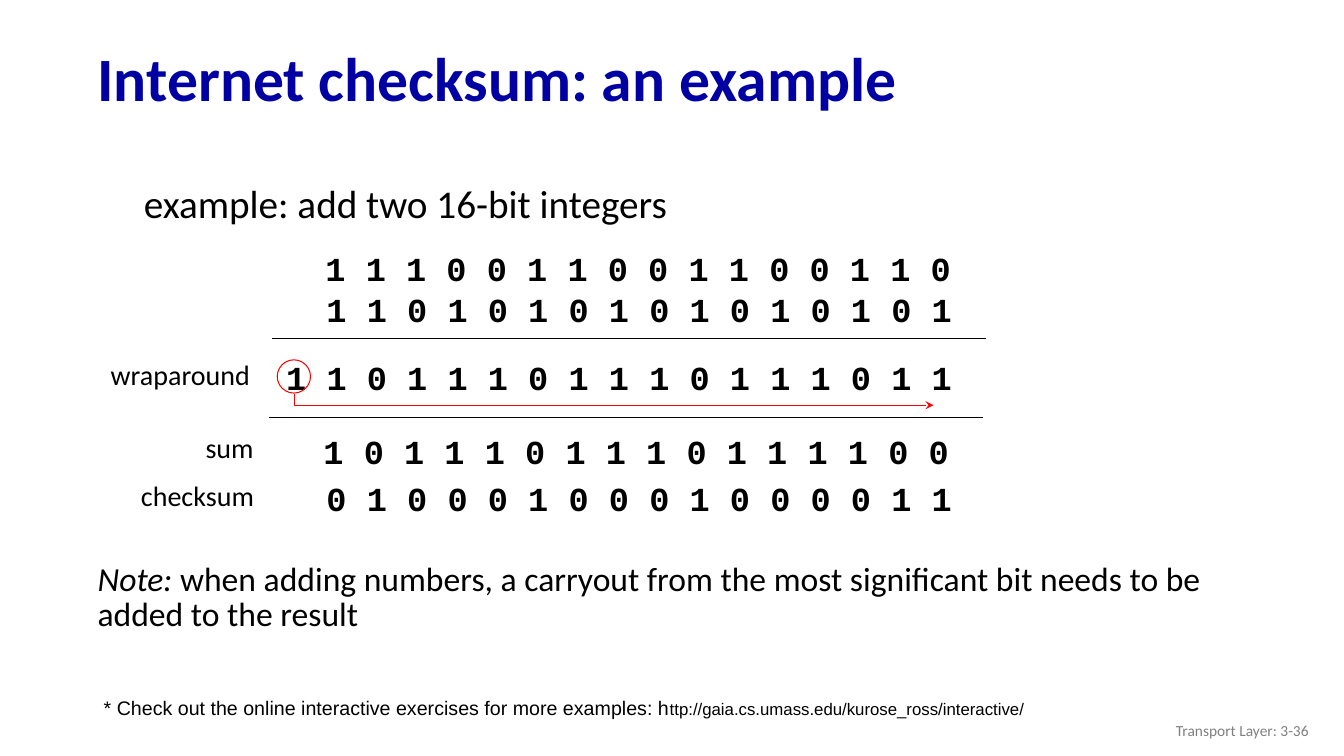
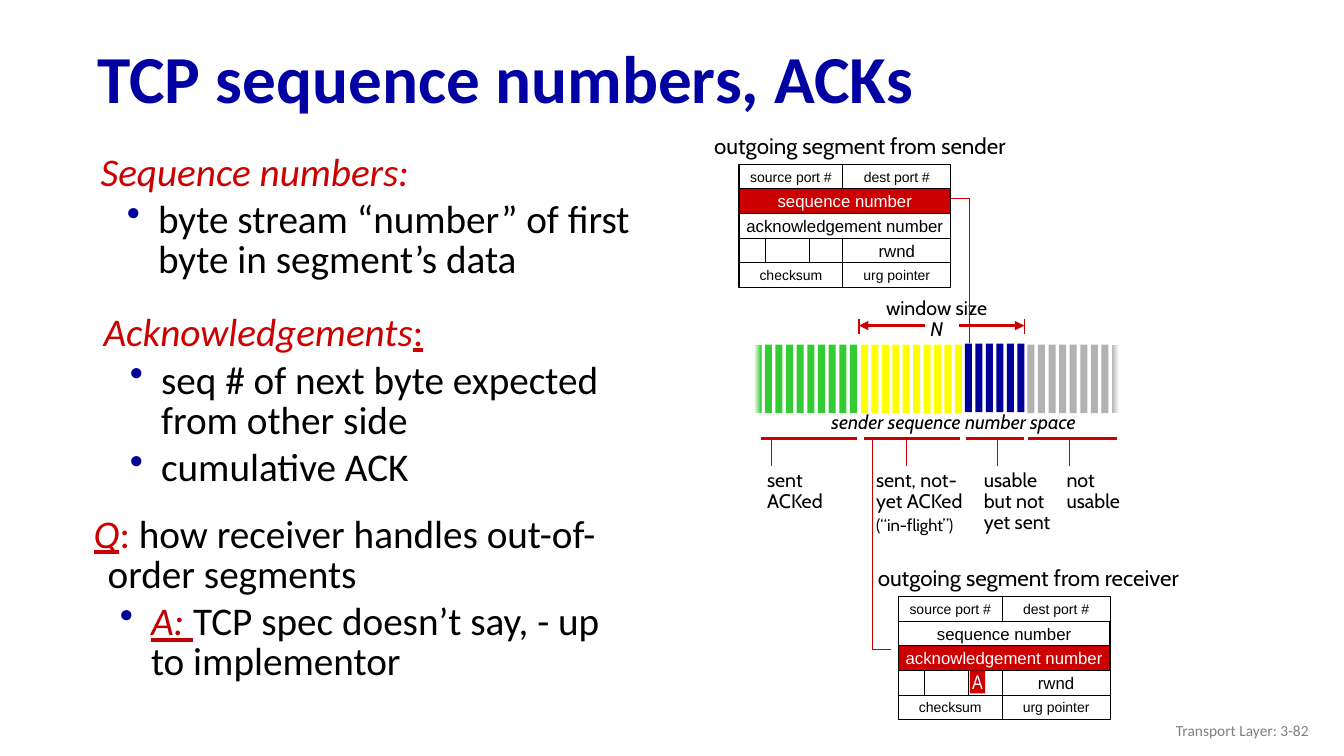
from dataclasses import dataclass, field

from lxml import etree
from pptx import Presentation
from pptx.dml.color import RGBColor
from pptx.enum.shapes import MSO_CONNECTOR, MSO_SHAPE
from pptx.enum.text import MSO_ANCHOR, PP_ALIGN
from pptx.oxml.ns import qn
from pptx.util import Inches, Pt

STRAIGHT = MSO_CONNECTOR.STRAIGHT
RECTANGLE, OVAL = MSO_SHAPE.RECTANGLE, MSO_SHAPE.OVAL
LEFT, CENTER, RIGHT = PP_ALIGN.LEFT, PP_ALIGN.CENTER, PP_ALIGN.RIGHT
TOP, MIDDLE = MSO_ANCHOR.TOP, MSO_ANCHOR.MIDDLE

BLACK, WHITE, GREY = "000000", "FFFFFF", "808080"
TITLE_BLUE, BULLET_BLUE = "0000A3", "000099"
RED, DARK_RED, BRIGHT_RED = "CC0000", "C00000", "FF0000"
GREEN, YELLOW, SILVER = "33CC33", "FFFF00", "B2B2B2"

TITLE = {"name": "Calibri", "bold": True, "color": TITLE_BLUE}
FOOTER = {"name": "Calibri", "size": 11, "color": GREY}
BODY = {"name": "Calibri", "size": 28}
HEADING = {**BODY, "color": RED, "italic": True}
ROW_LABEL = {"name": "Calibri", "size": 20}
NOTE = {"name": "Calibri", "size": 24}
BITS = {"name": "Courier New", "size": 24, "bold": True}
SOURCE = {"name": "Arial", "size": 14}
CAPTION = {"name": "Cabin", "size": 16}
LABEL = {"name": "Cabin", "size": 14}


@dataclass
class Span:
    text: str
    style: dict


@dataclass
class Para:
    spans: list[Span]
    align: PP_ALIGN = LEFT
    spacing: float = 1.0
    before: float = 0
    margin: float = 0
    indent: float = 0
    bullet: bool = False


@dataclass
class Cell:
    row: int
    left: float
    width: float
    text: str = ""
    size: int = 10


@dataclass
class BarRun:
    color: str
    first: float
    last: float
    count: int
    top: float = 3.42


@dataclass
class Region:
    left: float
    right: float
    tick: float
    text_left: float
    text_width: float
    paras: list[Para] = field(default_factory=list)


def rgb(color: str) -> RGBColor:
    return RGBColor.from_string(color)


def plain(text: str, style: dict, **layout) -> Para:
    return Para([Span(text, style)], **layout)


# Text
def fill_frame(frame, paras: list[Para], anchor=TOP) -> None:
    frame.word_wrap = True
    frame.vertical_anchor = anchor
    for index, para in enumerate(paras):
        target = frame.add_paragraph() if index else frame.paragraphs[0]
        if para.margin:
            properties = target._p.get_or_add_pPr()
            properties.set("marL", str(Inches(para.margin)))
            properties.set("indent", str(Inches(para.indent)))
            if para.bullet:
                bullet_color = etree.SubElement(properties, qn("a:buClr"))
                etree.SubElement(bullet_color, qn("a:srgbClr"), val=BULLET_BLUE)
                etree.SubElement(properties, qn("a:buChar"), char="•")
        target.alignment = para.align
        target.line_spacing = para.spacing
        target.space_before = Pt(para.before)
        for span in para.spans:
            run = target.add_run()
            run.text = span.text
            style = {"color": BLACK, **span.style}
            run.font.color.rgb = rgb(style.pop("color"))
            for name, value in style.items():
                setattr(run.font, name, Pt(value) if name == "size" else value)


def add_text(page, left: float, top: float, width: float, height: float,
             paras: list[Para], anchor=TOP) -> None:
    box = page.shapes.add_textbox(Inches(left), Inches(top), Inches(width), Inches(height))
    fill_frame(box.text_frame, paras, anchor)


# Shapes and lines
def add_shape(page, kind, left: float, top: float, width: float, height: float,
              fill: str | tuple[str, str] | None = None,
              line: str | None = None):
    shape = page.shapes.add_shape(
        kind, Inches(left), Inches(top), Inches(width), Inches(height))
    shape.shadow.inherit = False
    if isinstance(fill, tuple):
        shape.fill.gradient()
        shape.fill.gradient_angle = 0
        for stop, color, position in zip(shape.fill.gradient_stops, fill, (0, 1)):
            stop.color.rgb = rgb(color)
            stop.position = position
    elif fill:
        shape.fill.solid()
        shape.fill.fore_color.rgb = rgb(fill)
    else:
        shape.fill.background()
    if line:
        style_line(shape.line, line, 0.75)
    else:
        shape.line.fill.background()
    return shape


def style_line(line, color: str, weight: float, arrow: str = "") -> None:
    line.color.rgb = rgb(color)
    line.width = Pt(weight)
    if arrow:
        etree.SubElement(line._get_or_add_ln(), qn("a:tailEnd"), type=arrow)


def add_line(page, x1: float, y1: float, x2: float, y2: float,
             color: str, weight: float = 0.75, arrow: str = "") -> None:
    line = page.shapes.add_connector(
        STRAIGHT, Inches(x1), Inches(y1), Inches(x2), Inches(y2))
    style_line(line.line, color, weight, arrow)
    etree.SubElement(line._element.spPr, qn("a:effectLst"))


def add_elbow(page, points: list[tuple[float, float]], color: str, arrow: str = "") -> None:
    corners = [(Inches(x), Inches(y)) for x, y in points]
    builder = page.shapes.build_freeform(*corners[0])
    builder.add_line_segments(corners[1:], close=False)
    elbow = builder.convert_to_shape()
    elbow.shadow.inherit = False
    elbow.fill.background()
    style_line(elbow.line, color, 0.75, arrow)


def new_page(deck, title: str, size: int, number: int):
    page = deck.slides.add_slide(deck.slide_layouts[6])
    add_text(page, 0.87, 0.32, 12.14, 0.98,
             [plain(title, {**TITLE, "size": size}, spacing=0.9)], MIDDLE)
    add_text(page, 10.08, 7.05, 3, 0.4,
             [plain(f"Transport Layer: 3-{number}", FOOTER, align=RIGHT)], MIDDLE)
    return page


# Checksum slide
BIT_ROWS = [
    (3.13, 2.41, "1 1 1 0 0 1 1 0 0 1 1 0 0 1 1 0"),
    (3.14, 2.82, "1 1 0 1 0 1 0 1 0 1 0 1 0 1 0 1"),
    (2.74, 3.49, "1 1 0 1 1 1 0 1 1 1 0 1 1 1 0 1 1"),
    (3.11, 4.23, "1 0 1 1 1 0 1 1 1 0 1 1 1 1 0 0"),
    (3.14, 4.69, "0 1 0 0 0 1 0 0 0 1 0 0 0 0 1 1"),
]
ROW_LABELS = [(1, 3.5, "wraparound"), (1.94, 4.22, "sum"), (1.3, 4.7, "checksum")]


def build_checksum(deck) -> None:
    page = new_page(deck, "Internet checksum: an example", 44, 36)
    add_text(page, 1.33, 1.59, 8.5, 0.8,
             [plain("example: add two 16-bit integers", BODY, spacing=1.3)])
    for left, top, bits in BIT_ROWS:
        add_text(page, left, top, 7.2, 0.5, [plain(bits, BITS)])
    for left, top, label in ROW_LABELS:
        add_text(page, left, top, 1.8, 0.44, [plain(label, ROW_LABEL)])
    for left, top in ((2.7, 3.36), (2.67, 4.14)):
        add_line(page, left, top, left + 7.08, top, BLACK, 1)

    # Carry bit and its way round
    add_shape(page, OVAL, 2.75, 3.57, 0.33, 0.33, line=BRIGHT_RED)
    add_elbow(page, [(2.92, 3.91), (2.92, 4.02), (9.26, 4.02)], BRIGHT_RED, "stealth")

    add_text(page, 0.87, 5.55, 11.34, 1.18, [Para([
        Span("Note:", {**NOTE, "italic": True}),
        Span(" when adding numbers, a carryout from the most significant bit "
             "needs to be added to the result", NOTE)], spacing=0.85)])
    add_text(page, 0.93, 6.85, 10.78, 0.34, [Para([
        Span("* Check out the online interactive exercises for more examples: h", SOURCE),
        Span("ttp://gaia.cs.umass.edu/kurose_ross/interactive/", {**SOURCE, "size": 12})])])


# Sequence number slide
SEGMENT_WIDTH, ROW_HEIGHT = 2.1, 1.22 / 5
HALF = 1.03
SEQUENCE_ROW, ACK_ROW = 1, 2
SEGMENT_CELLS = [
    Cell(0, 0, HALF, "source port #"),
    Cell(0, HALF, SEGMENT_WIDTH - HALF, "dest port #"),
    Cell(SEQUENCE_ROW, 0, SEGMENT_WIDTH, "sequence number", 12),
    Cell(ACK_ROW, 0, SEGMENT_WIDTH, "acknowledgement number", 12),
    Cell(3, 0, 0.26),
    Cell(3, 0.26, 0.44),
    Cell(3, 0.7, 0.33),
    Cell(3, HALF, 0.99, "rwnd", 12),
    Cell(4, 0, HALF, "checksum"),
    Cell(4, HALF, SEGMENT_WIDTH - HALF, "urg pointer"),
]
BAR_RUNS = [
    BarRun(GREEN, 7.48, 8.43, 10),
    BarRun(YELLOW, 8.54, 9.47, 10),
    BarRun(BULLET_BLUE, 9.57, 10.09, 6, 3.41),
    BarRun(SILVER, 10.19, 11.03, 9),
]


def label_lines(*lines: str) -> list[Para]:
    return [plain(line, LABEL, spacing=0.9) for line in lines]


REGIONS = [
    Region(7.55, 8.5, 7.65, 7.51, 1, label_lines("sent", "ACKed")),
    Region(8.57, 9.52, 8.99, 8.59, 1.25, label_lines("sent, not-yet ACKed") + [
        plain("(“in-flight”)", {**LABEL, "size": 12}, spacing=0.9, before=3)]),
    Region(9.58, 10.16, 9.89, 9.66, 1.17, label_lines("usable", "but not", "yet sent")),
    Region(10.2, 11.08, 10.61, 10.48, 0.9, label_lines("not", "usable")),
]


def add_cell_text(shape, text: str, style: dict) -> None:
    frame = shape.text_frame
    for side in ("left", "right", "top", "bottom"):
        setattr(frame, f"margin_{side}", 0)
    fill_frame(frame, [plain(text, style, align=CENTER)], MIDDLE)


def add_segment(page, left: float, top: float, active: int,
                caption: str, caption_center: float) -> None:
    add_text(page, caption_center - 1.8, top - 0.37, 3.6, 0.37,
             [plain(caption, CAPTION, align=CENTER)])
    for cell in SEGMENT_CELLS:
        lit = cell.row == active
        width = SEGMENT_WIDTH - HALF if cell.text == "rwnd" else cell.width
        box = add_shape(page, RECTANGLE, left + cell.left, top + cell.row * ROW_HEIGHT,
                        width, ROW_HEIGHT, RED if lit else None, BLACK)
        if cell.text:
            add_cell_text(box, cell.text, {"name": "Arial", "size": cell.size,
                                           "color": WHITE if lit else BLACK})


def heading(*spans: Span) -> Para:
    return Para(list(spans), spacing=0.85, margin=0.26, indent=-0.14)


def bullet(*spans: Span) -> Para:
    return Para(list(spans), spacing=0.85, before=5.5, margin=0.69, indent=-0.31, bullet=True)


def build_sequence(deck) -> None:
    page = new_page(deck, "TCP sequence numbers, ACKs", 48, 82)
    add_text(page, 0.78, 1.48, 5.57, 1.43, [
        heading(Span("Sequence numbers:", HEADING)),
        bullet(Span("byte stream “number” of first byte in segment’s data", BODY))])
    add_text(page, 0.81, 3.07, 5.57, 1.93, [
        heading(Span("Acknowledgements", HEADING),
                Span(":", {**BODY, "color": RED, "underline": True})),
        bullet(Span("seq # of next byte expected from other side", BODY)),
        bullet(Span("cumulative ACK", BODY))])
    add_text(page, 0.71, 5.07, 5.57, 1.89, [
        heading(Span("Q", {**HEADING, "underline": True}),
                Span(":", {**BODY, "color": RED}),
                Span(" how receiver handles out-of-order segments", BODY)),
        bullet(Span("A: ", {**HEADING, "color": DARK_RED, "underline": True}),
               Span("TCP spec doesn’t say, - up to implementor", BODY))])

    # Sequence number space, fading out at both ends
    for run in BAR_RUNS:
        pitch = (run.last - run.first) / (run.count - 1)
        for index in range(run.count):
            fill = run.color
            if run is BAR_RUNS[0] and index == 0:
                fill = (WHITE, run.color)
            elif run is BAR_RUNS[-1] and index == run.count - 1:
                fill = (run.color, WHITE)
            add_shape(page, RECTANGLE, run.first + index * pitch, run.top, 0.07, 0.68, fill)
    add_text(page, 7.96, 4.02, 3, 0.33, [
        plain("sender sequence number space", {**LABEL, "italic": True}, align=CENTER)])
    for region in REGIONS:
        add_line(page, region.left, 4.35, region.right, 4.35, RED, 2.25)
        add_line(page, region.tick, 4.37, region.tick, 4.62, RED)
        add_text(page, region.text_left, 4.62, region.text_width, 0.75, region.paras)

    # Window size
    add_text(page, 8.59, 2.91, 1.4, 0.52, [
        plain("window size", LABEL, align=CENTER, spacing=0.9),
        plain("N", {**LABEL, "italic": True}, align=CENTER, spacing=0.9)])
    for start, end in ((9.17, 8.52), (9.51, 10.16)):
        add_line(page, start, 3.23, end, 3.23, RED, 2.25, "triangle")
        add_line(page, end, 3.16, end, 3.31, RED)

    # Segments and their links to the number space
    add_segment(page, 7.33, 1.63, SEQUENCE_ROW, "outgoing segment from sender", 8.53)
    add_elbow(page, [(9.43, 1.97), (9.62, 1.97), (9.62, 3.4)], RED)
    add_segment(page, 8.91, 5.92, ACK_ROW, "outgoing segment from receiver", 10.2)
    add_elbow(page, [(8.84, 6.44), (8.65, 6.44), (8.65, 4.36)], RED)
    flag = add_shape(page, RECTANGLE, 9.62, 6.65, 0.15, 0.23, RED)
    add_cell_text(flag, "A", {"name": "Arial Narrow", "size": 14, "color": WHITE})


def main() -> None:
    deck = Presentation()
    deck.slide_width, deck.slide_height = Inches(13.33), Inches(7.5)
    build_checksum(deck)
    build_sequence(deck)
    deck.save("out.pptx")


if __name__ == "__main__":
    main()
